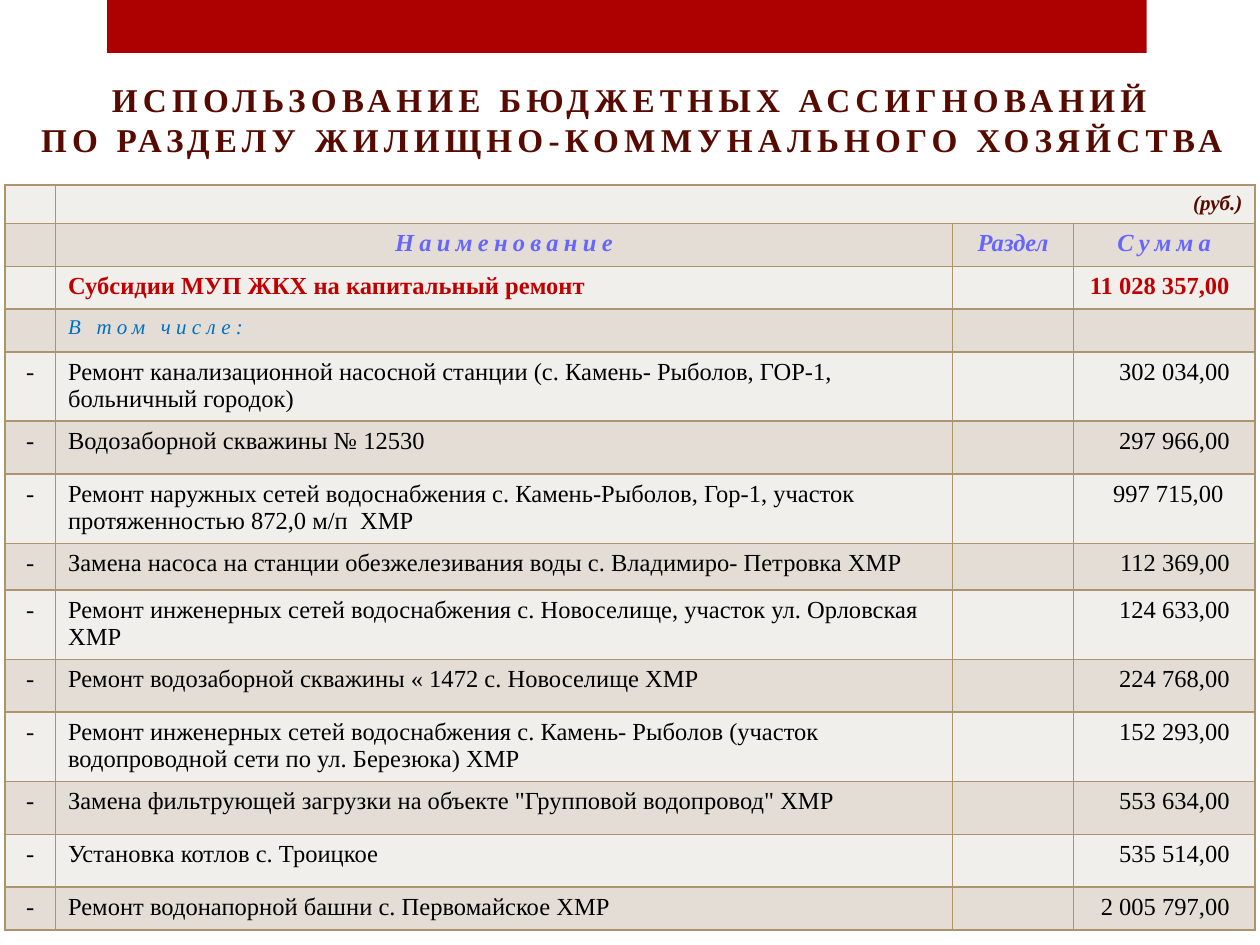
"""Build the slide on budget use in housing and communal services."""
from copy import deepcopy

from lxml import etree
from pptx import Presentation
from pptx import util as u
from pptx.dml.color import RGBColor
from pptx.enum import shapes, text
from pptx.oxml.ns import qn

RED = RGBColor(0xAD, 0x01, 0x01)
BROWN = RGBColor(0x56, 0x0A, 0x00)
VIOLET = RGBColor(0x66, 0x66, 0xFF)
CRIMSON = RGBColor(0xC0, 0x00, 0x00)
BLUE = RGBColor(0x00, 0x70, 0xC0)
BLACK = RGBColor(0x00, 0x00, 0x00)
EDGE = RGBColor(0xAC, 0x95, 0x6E)
BANDS = RGBColor(0xF1, 0xEF, 0xEB), RGBColor(0xE3, 0xDD, 0xD5)
FONT = "Times New Roman"
LEFT, MID, RIGHT = text.PP_ALIGN.LEFT, text.PP_ALIGN.CENTER, text.PP_ALIGN.RIGHT

TITLE = ("ИСПОЛЬЗОВАНИЕ БЮДЖЕТНЫХ АССИГНОВАНИЙ",
         "ПО РАЗДЕЛУ ЖИЛИЩНО-КОММУНАЛЬНОГО ХОЗЯЙСТВА")
HEAD = [
    ("", "(руб.)", "", ""),
    ("", "Наименование", "Раздел", "Сумма"),
    ("", "Субсидии МУП ЖКХ на капитальный ремонт", "", "11 028 357,00"),
    ("", "В том числе:", "", ""),
]
WORKS = [
    ("Ремонт канализационной насосной станции (с. Камень- Рыболов, ГОР-1, больничный городок)", "302 034,00"),
    ("Водозаборной скважины № 12530", "297 966,00"),
    ("Ремонт наружных сетей водоснабжения с. Камень-Рыболов, Гор-1, участок "
     "протяженностью 872,0 м/п  ХМР", "997 715,00 "),
    ("Замена насоса на станции обезжелезивания воды с. Владимиро- Петровка ХМР", "112 369,00"),
    ("Ремонт инженерных сетей водоснабжения с. Новоселище, участок ул. Орловская ХМР", "124 633,00"),
    ("Ремонт водозаборной скважины « 1472 с. Новоселище ХМР", "224 768,00"),
    ("Ремонт инженерных сетей водоснабжения с. Камень- Рыболов (участок "
     "водопроводной сети по ул. Березюка) ХМР", "152 293,00"),
    ("Замена фильтрующей загрузки на объекте \"Групповой водопровод\" ХМР", "553 634,00"),
    ("Установка котлов с. Троицкое", "535 514,00"),
    ("Ремонт водонапорной башни с. Первомайское ХМР", "2 005 797,00"),
]
ROWS = HEAD + [("-", name, "", sum_) for name, sum_ in WORKS]
COLS = 0.4, 7.12, 0.96, 1.44
TALL = 0.29, 0.34, 0.34, 0.34, 0.55, 0.42, 0.55, 0.37, 0.55, 0.42, 0.55, 0.42, 0.42, 0.34
# size, colour, bold, italic, spacing
STYLES = [(12, BROWN, True, True, 0), (14, VIOLET, True, True, 3),
          (14, CRIMSON, True, False, 0), (12, BLUE, False, True, 3)]
PLAIN = 14, BLACK, False, False, 0
ALIGNS = {0: (MID, RIGHT, MID, RIGHT), 1: (MID,) * 4}


def write(para, words, size, color, bold, slant, gap):
    run = para.add_run()
    run.text = words
    font = run.font
    font.name, font.size, font.bold, font.italic = FONT, u.Pt(size), bold, slant
    font.color.rgb = color
    run._r.get_or_add_rPr().set("spc", str(gap * 100))
    return run


def edge(cell):
    props = cell._tc.get_or_add_tcPr()
    for side in ("lnL", "lnR", "lnT", "lnB"):
        line = etree.SubElement(props, qn("a:" + side), w=str(u.Pt(1)))
        fill = etree.SubElement(line, qn("a:solidFill"))
        etree.SubElement(fill, qn("a:srgbClr"), val=str(EDGE))


def add_title(slide):
    title = slide.shapes.title
    title.left, title.top, title.width, title.height = map(u.Inches, (0.16, 0.44, 9.72, 0.87))
    frame = title.text_frame
    frame.auto_size = text.MSO_AUTO_SIZE.NONE
    frame.vertical_anchor = text.MSO_ANCHOR.BOTTOM
    para = frame.paragraphs[0]
    para.alignment = MID
    style = 19, BROWN, True, False, 3
    first = write(para, TITLE[0], *style)
    para.add_line_break()
    para._p[-1].append(deepcopy(first._r.rPr))
    write(para, TITLE[1], *style)


def add_grid(slide):
    table = slide.shapes.add_table(len(ROWS), len(COLS), u.Inches(0.04), u.Inches(1.47),
                                   u.Inches(sum(COLS)), u.Inches(sum(TALL))).table
    table.first_row = table.horz_banding = False
    for col, wide in zip(table.columns, COLS):
        col.width = u.Inches(wide)
    for i, (row, tall) in enumerate(zip(ROWS, TALL)):
        table.rows[i].height = u.Inches(tall)
        style = STYLES[i] if i < len(STYLES) else PLAIN
        aligns = ALIGNS.get(i, (MID, LEFT, MID, RIGHT))
        for j, words in enumerate(row):
            cell = table.cell(i, j)
            edge(cell)
            cell.fill.solid()
            cell.fill.fore_color.rgb = BANDS[i % 2]
            para = cell.text_frame.paragraphs[0]
            para.alignment = aligns[j]
            if words:
                gap = 0 if words == "Раздел" else style[-1]
                write(para, words, *style[:-1], gap)
            else:
                etree.SubElement(para._p, qn("a:endParaRPr"), sz="1200")
            if j == 3 and i > 1 and words:
                cell.margin_right = u.Inches(0.2)
    table.cell(0, 1).merge(table.cell(0, 3))


def main():
    deck = Presentation()
    deck.slide_width, deck.slide_height = u.Inches(10), u.Inches(7.5)
    slide = deck.slides.add_slide(deck.slide_layouts[5])
    bar = slide.shapes.add_shape(shapes.MSO_SHAPE.RECTANGLE,
                                 *map(u.Inches, (0.85, 0, 8.25, 0.42)))
    bar.shadow.inherit = False
    bar.fill.solid()
    bar.fill.fore_color.rgb = RED
    bar.line.fill.background()
    add_title(slide)
    add_grid(slide)
    deck.save("out.pptx")


if __name__ == "__main__":
    main()
